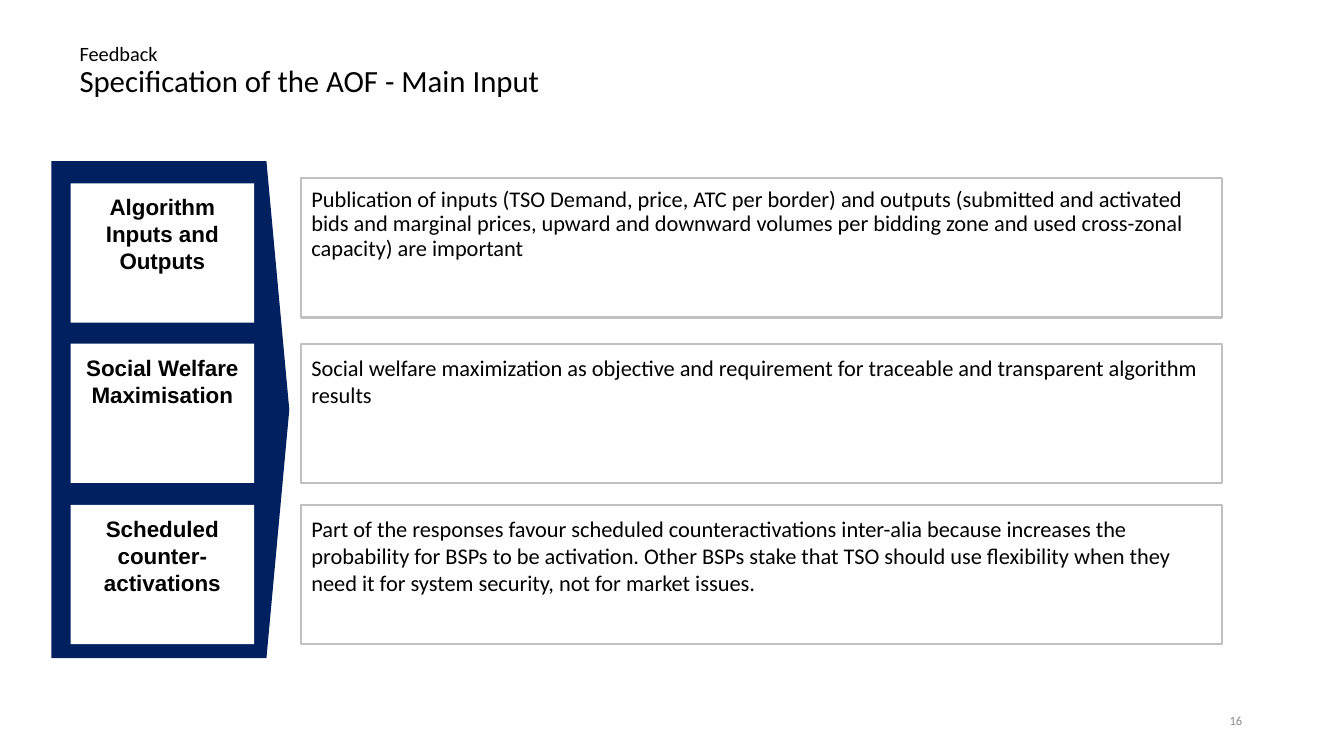
"""Build the slide on the main input to the AOF specification."""
import pptx
import pptx.dml.color
import pptx.enum.shapes
import pptx.enum.text
import pptx.util

Inches, Pt = pptx.util.Inches, pptx.util.Pt
RGBColor = pptx.dml.color.RGBColor
MSO_SHAPE = pptx.enum.shapes.MSO_SHAPE
PP_ALIGN = pptx.enum.text.PP_ALIGN
MSO_ANCHOR = pptx.enum.text.MSO_ANCHOR

BLACK = RGBColor(0x00, 0x00, 0x00)
WHITE = RGBColor(0xFF, 0xFF, 0xFF)
NAVY = RGBColor(0x00, 0x20, 0x60)
SILVER = RGBColor(0xC0, 0xC0, 0xC0)
GRAY = RGBColor(0x8C, 0x8C, 0x8C)

PAGE = "16"
TITLE = [("Feedback", 14.5), ("Specification of the AOF - Main Input", 22)]
TOPICS = [
    (1.82, 1.77, "Algorithm Inputs and Outputs",
     "Publication of inputs (TSO Demand, price, ATC per border) and outputs "
     "(submitted and activated bids and marginal prices, upward and downward "
     "volumes per bidding zone and used cross-zonal capacity) are important", 0.9),
    (3.41, 3.41, "Social Welfare Maximisation",
     "Social welfare maximization as objective and requirement for traceable "
     "and transparent algorithm results", 1.0),
    (5.01, 5.01, "Scheduled counter-activations",
     "Part of the responses favour scheduled counteractivations inter-alia "
     "because increases the probability for BSPs to be activation. Other BSPs "
     "stake that TSO should use flexibility when they need it for system "
     "security, not for market issues.", 1.0),
]
LABEL_LEFT, LABEL_WIDTH = 0.7, 1.82
BODY_LEFT, BODY_WIDTH = 2.99, 9.13
BOX_HEIGHT = 1.38


def style(p, size, name, color, align=PP_ALIGN.LEFT):
    p.alignment = align
    p.font.size, p.font.name = Pt(size), name
    p.font.color.rgb = color


def add_text(slide, box):
    tf = slide.shapes.add_textbox(*map(Inches, box)).text_frame
    tf.word_wrap, tf.vertical_anchor = True, MSO_ANCHOR.MIDDLE
    return tf.paragraphs[0]


def add_shape(slide, kind, box, fill=None, line=None):
    sp = slide.shapes.add_shape(kind, *map(Inches, box))
    sp.shadow.inherit = False
    if fill is None:
        sp.fill.background()
    else:
        sp.fill.solid()
        sp.fill.fore_color.rgb = fill
    if line is None:
        sp.line.fill.background()
    else:
        sp.line.color.rgb, sp.line.width = line, Pt(1.5)
    return sp


def add_box(slide, left, top, width, text, fill=None, line=None):
    sp = add_shape(slide, MSO_SHAPE.RECTANGLE, (left, top, width, BOX_HEIGHT), fill, line)
    tf = sp.text_frame
    tf.word_wrap, tf.vertical_anchor = True, MSO_ANCHOR.TOP
    tf.margin_left = tf.margin_right = tf.margin_top = tf.margin_bottom = Inches(0.1)
    p = tf.paragraphs[0]
    p.text = text
    return p


def main():
    prs = pptx.Presentation()
    prs.slide_width, prs.slide_height = Inches(13.33), Inches(7.5)
    slide = prs.slides.add_slide(prs.slide_layouts[6])

    p = add_text(slide, (9.42, 6.95, 3, 0.4))
    p.text = PAGE
    style(p, 9, "Calibri", GRAY, PP_ALIGN.RIGHT)

    p = add_text(slide, (0.69, 0.36, 9.95, 0.7))
    style(p, 22, "Calibri", BLACK)
    p.line_spacing = 0.9
    for i, (text, size) in enumerate(TITLE):
        if i:
            p.add_line_break()
        r = p.add_run()
        r.text, r.font.size = text, Pt(size)

    sp = add_shape(slide, MSO_SHAPE.PENTAGON, (0.51, 1.6, 2.36, 4.93), NAVY)
    sp.adjustments[0] = 0.096

    for label_top, body_top, label, body, spacing in TOPICS:
        p = add_box(slide, BODY_LEFT, body_top, BODY_WIDTH, body, line=SILVER)
        style(p, 16, "Calibri", BLACK)
        p.line_spacing = spacing
        p = add_box(slide, LABEL_LEFT, label_top, LABEL_WIDTH, label, fill=WHITE)
        style(p, 16, "Arial", BLACK, PP_ALIGN.CENTER)
        p.font.bold = True

    prs.save("out.pptx")


if __name__ == "__main__":
    main()
